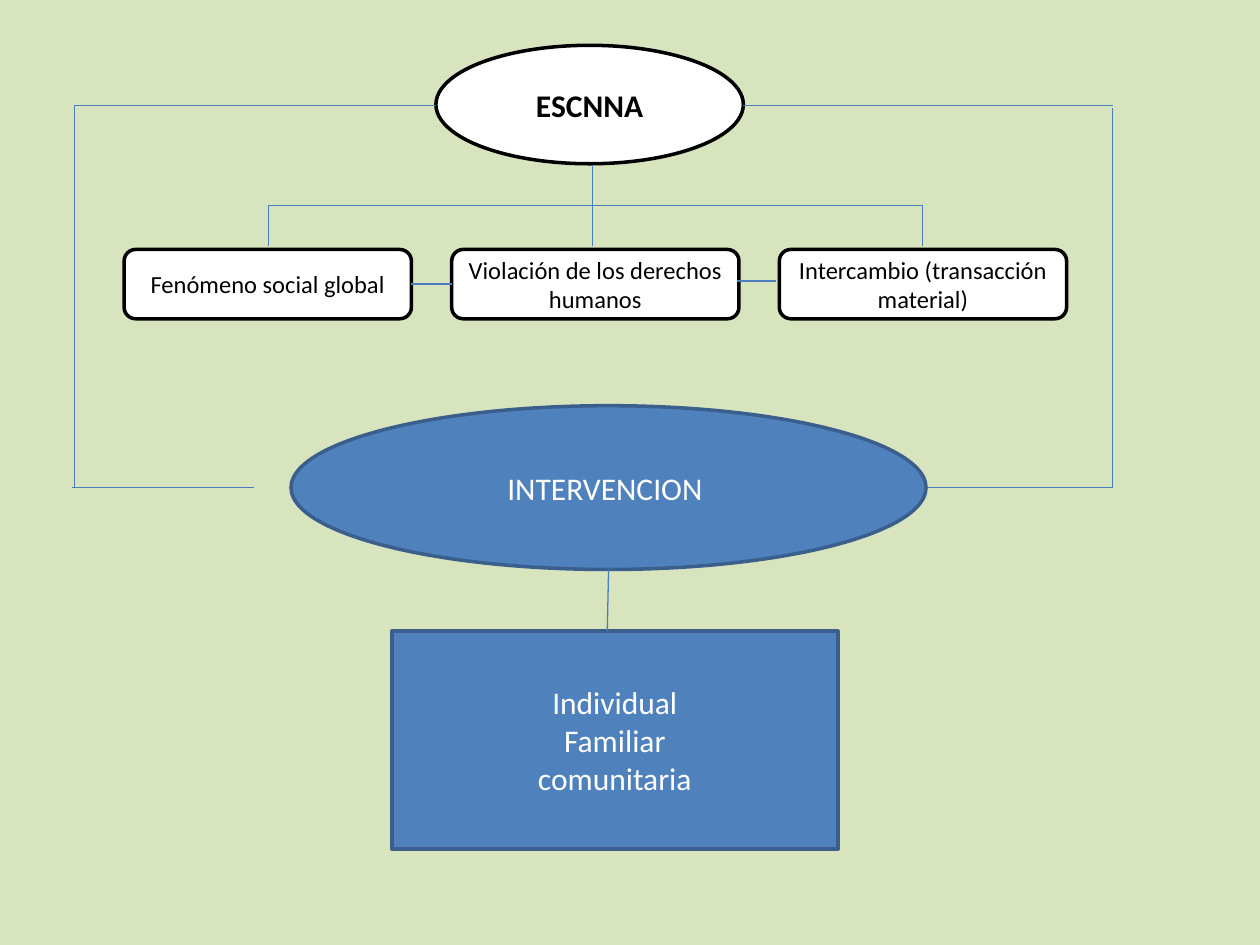
from pptx import Presentation
from pptx.dml.color import RGBColor
from pptx.enum.shapes import MSO_CONNECTOR, MSO_SHAPE
from pptx.enum.text import MSO_ANCHOR, PP_ALIGN
from pptx.oxml.ns import qn
from pptx.util import Inches, Pt

OVAL, RECT, ROUND = MSO_SHAPE.OVAL, MSO_SHAPE.RECTANGLE, MSO_SHAPE.ROUNDED_RECTANGLE
STRAIGHT = MSO_CONNECTOR.STRAIGHT
MIDDLE, CENTER = MSO_ANCHOR.MIDDLE, PP_ALIGN.CENTER
LEFT, RIGHT = 1, 3

GREEN = RGBColor(0xD7, 0xE4, 0xBD)
WHITE = RGBColor(0xFF, 0xFF, 0xFF)
BLACK = RGBColor(0, 0, 0)
BLUE = RGBColor(0x4F, 0x81, 0xBD)
NAVY = RGBColor(0x3A, 0x5F, 0x8C)
WIRE = RGBColor(0x4B, 0x7E, 0xBC)

LIGHT = {"fill": WHITE, "edge": BLACK, "ink": BLACK}
DARK = {"fill": BLUE, "edge": NAVY, "ink": WHITE}


class Board:
    """Draws on a grid of 100 columns by 75 rows."""

    def __init__(self, deck):
        self.slide = deck.slides.add_slide(deck.slide_layouts[6])
        self.col = deck.slide_width / 100
        self.row = deck.slide_height / 75
        back = self.slide.background.fill
        back.solid()
        back.fore_color.rgb = GREEN

    def spot(self, x, y):
        return round(x * self.col), round(y * self.row)

    def node(self, kind, x, y, wide, high, lines, look, size=18, bold=False):
        shape = self.slide.shapes.add_shape(kind, *self.spot(x, y), *self.spot(wide, high))
        shape.shadow.inherit = False
        shape.fill.solid()
        shape.fill.fore_color.rgb = look["fill"]
        shape.line.color.rgb = look["edge"]
        shape.line.width = Pt(2)
        frame = shape.text_frame
        frame.vertical_anchor = MIDDLE
        font = {"name": "Calibri", "size": Pt(size), "bold": bold}
        for i, line in enumerate(lines):
            para = frame.add_paragraph() if i else frame.paragraphs[0]
            para.alignment = CENTER
            run = para.add_run()
            run.text = line
            run.font.color.rgb = look["ink"]
            for key, value in font.items():
                setattr(run.font, key, value)
        return shape

    def wire(self, x1, y1, x2, y2):
        line = self.slide.shapes.add_connector(STRAIGHT, *self.spot(x1, y1), *self.spot(x2, y2))
        line.line.color.rgb = WIRE
        line.line.width = Pt(0.75)
        props = line._element.spPr
        props.append(props.makeelement(qn("a:effectLst"), {}))
        return line


def main():
    deck = Presentation()
    deck.slide_width, deck.slide_height = Inches(10), Inches(7.5)
    board = Board(deck)

    # Topic and its three traits
    board.node(OVAL, 34.6, 3.6, 24.4, 9.4, ["ESCNNA"], LIGHT, bold=True)
    traits = ["Fenómeno social global", "Violación de los derechos humanos",
              "Intercambio (transacción material)"]
    boxes = [board.node(ROUND, 9.85 + 26 * i, 19.8, 22.8, 5.5, [trait], LIGHT, size=14)
             for i, trait in enumerate(traits)]

    # Tree from the topic to the traits
    first, mid, last, bar = 21.3, 47, 73.2, 16.3
    board.wire(first, bar, last, bar)
    board.wire(mid, 13.1, mid, bar)
    for x in (first, mid, last):
        board.wire(x, bar, x, 19.5)

    # Links between the traits
    link = board.wire(32.7, 22.6, 35.8, 22.6)
    link.begin_connect(boxes[0], RIGHT)
    link.end_connect(boxes[1], LEFT)
    board.wire(58.5, 22.3, 61.6, 22.3)

    # Outer loop from the topic to the intervention
    west, east, top, low = 5.9, 88.3, 8.4, 38.7
    board.wire(34.6, top, west, top)
    board.wire(east, top, 59, top)
    board.wire(west, top, west, low)
    board.wire(east, top + 0.2, east, low)
    board.wire(west - 0.2, low, 20.2, low)
    board.wire(73.5, low, east, low)

    # Intervention and its levels
    board.node(OVAL, 23.1, 32.2, 50.4, 13, ["INTERVENCION "], DARK)
    board.node(RECT, 31.1, 50.1, 35.4, 17.3, ["Individual", "Familiar", "comunitaria"], DARK)
    board.wire(48.3, 45.2, 48.2, 50.1)

    deck.save("out.pptx")


if __name__ == "__main__":
    main()
